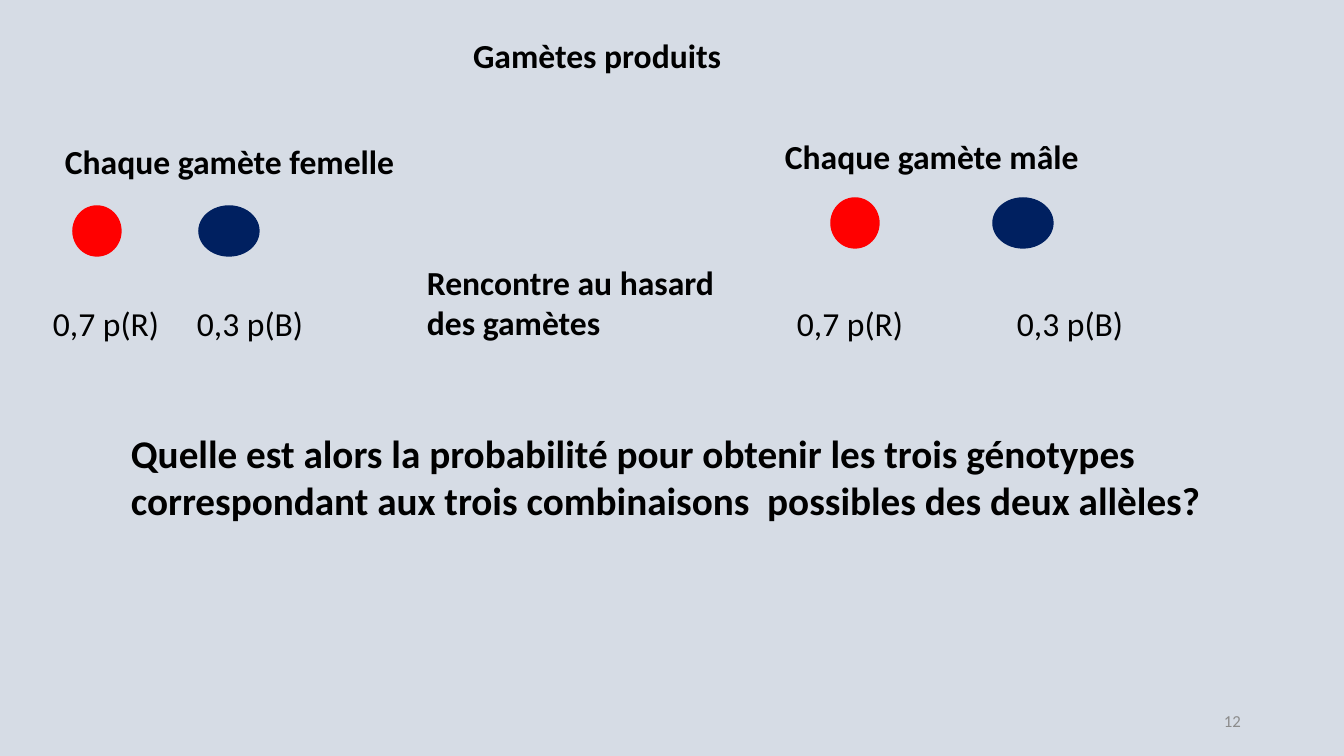
from pptx import Presentation
from pptx.dml.color import RGBColor
from pptx.enum.shapes import MSO_SHAPE
from pptx.enum.text import MSO_ANCHOR, MSO_AUTO_SIZE, PP_ALIGN
from pptx.oxml.ns import qn
from pptx.util import Pt
from lxml.etree import SubElement

EMU_PER_PX = 914400 / 100.8


def px(length):
    return round(length * EMU_PER_PX)


def color(value):
    return RGBColor.from_string(value)


class GameteSlide:
    font = "Calibri"
    ink = "000000"
    muted = "8C8C8C"
    background = "D6DCE5"

    def __init__(self, deck):
        self.page = deck.slides.add_slide(deck.slide_layouts[5])
        self.page.background.fill.solid()
        self.page.background.fill.fore_color.rgb = color(self.background)

    def fill_text(self, box, lines, size, bold, ink, align, anchor, wrap):
        frame = box.text_frame
        frame.word_wrap = wrap
        frame.auto_size = MSO_AUTO_SIZE.NONE
        frame.vertical_anchor = anchor
        for index, line in enumerate(lines):
            para = frame.paragraphs[0] if index == 0 else frame.add_paragraph()
            para.alignment = align
            span = para.add_run()
            span.text = line
            span.font.name = self.font
            span.font.size = Pt(size)
            span.font.bold = bold
            span.font.color.rgb = color(ink)

    def title(self, left, top, width, height, line):
        box = self.page.shapes.title
        box.left, box.top, box.width, box.height = map(px, (left, top, width, height))
        self.fill_text(box, [line], 24, True, self.ink, PP_ALIGN.LEFT, MSO_ANCHOR.TOP, True)

    def text(self, left, top, width, height, *lines, size=24, bold=True, ink=ink,
             align=PP_ALIGN.LEFT, anchor=MSO_ANCHOR.TOP, wrap=True):
        box = self.page.shapes.add_textbox(*map(px, (left, top, width, height)))
        self.fill_text(box, lines, size, bold, ink, align, anchor, wrap)
        return box

    def frequencies(self, left, top, width, height, tab):
        box = self.text(left, top, width, height, "0,7 p(R)\t0,3 p(B)", bold=False)
        properties = box.text_frame.paragraphs[0]._p.get_or_add_pPr()
        stops = SubElement(properties, qn("a:tabLst"))
        SubElement(stops, qn("a:tab"), pos=str(px(tab)), algn="l")

    def allele(self, left, top, width, height, fill):
        oval = self.page.shapes.add_shape(
            MSO_SHAPE.OVAL, *map(px, (left, top, width, height)))
        oval.shadow.inherit = False
        oval.fill.solid()
        oval.fill.fore_color.rgb = color(fill)
        oval.line.color.rgb = color(fill)
        oval.line.width = Pt(1)


def main():
    deck = Presentation()
    deck.slide_width, deck.slide_height = px(1344), px(756)
    slide = GameteSlide(deck)

    slide.title(463, 30, 341, 50, "Gamètes produits")
    slide.text(55, 136, 407, 50, "Chaque gamète femelle")
    slide.text(775, 131, 496, 50, "Chaque gamète mâle")

    for red_left, blue_left, top in ((73, 199, 206), (831, 993, 198)):
        slide.allele(red_left, top, 48, 50, "FF0000")
        slide.allele(blue_left, top, 60, 50, "002060")

    for left, width, tab in ((43, 284, 144), (787, 360, 220)):
        slide.frequencies(left, 298, width, 50, tab)

    slide.text(417, 257, 310, 92, "Rencontre au hasard", "des gamètes", wrap=False)
    slide.text(121, 424, 1102, 105,
               "Quelle est alors la probabilité pour obtenir les trois génotypes",
               "correspondant aux trois combinaisons  possibles des deux allèles?",
               size=28, wrap=False)
    slide.text(949, 701, 302, 40, "12", size=12, bold=False, ink=slide.muted,
               align=PP_ALIGN.RIGHT, anchor=MSO_ANCHOR.MIDDLE)

    deck.save("out.pptx")


if __name__ == "__main__":
    main()
